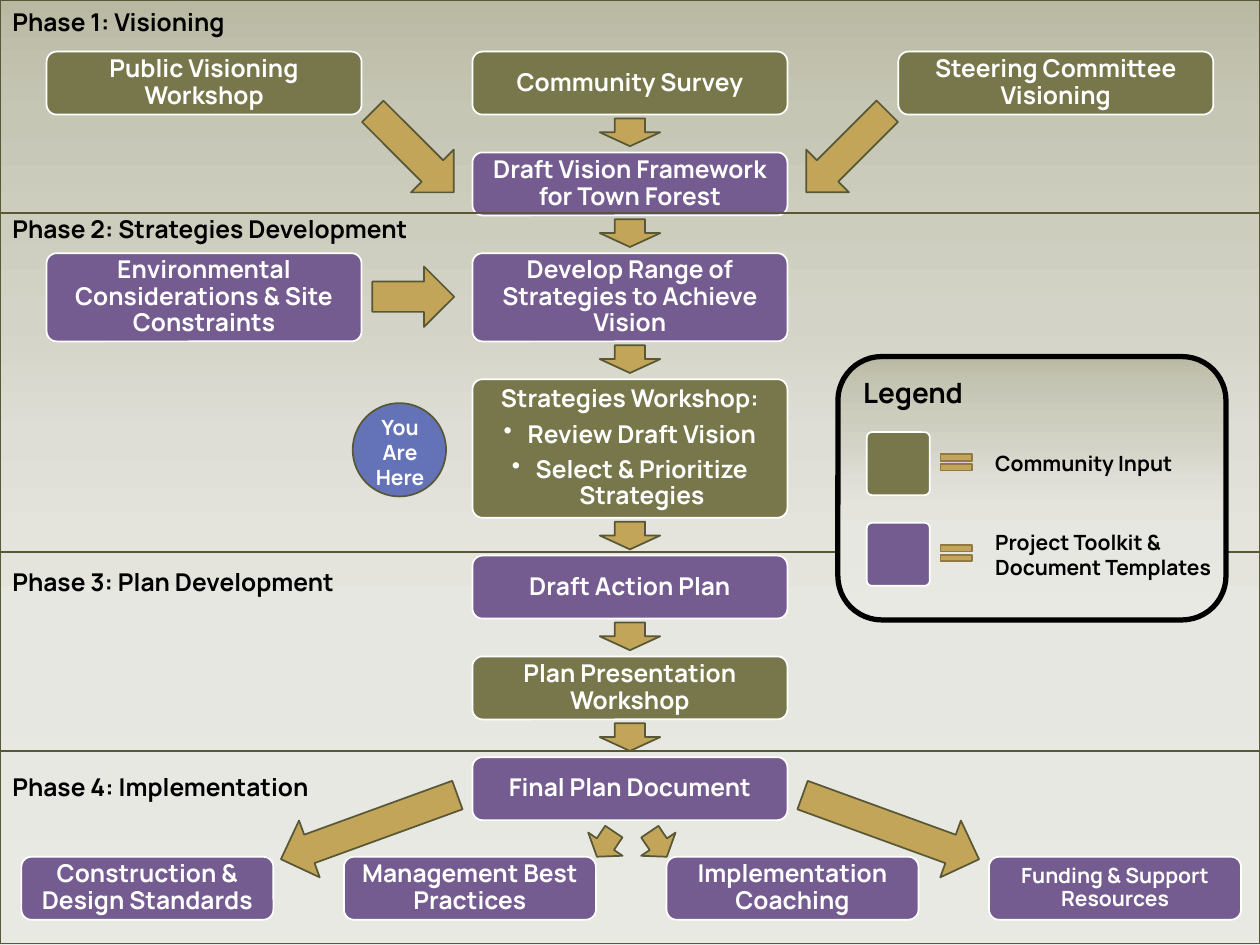
"""Build a four-phase town forest planning flowchart."""
from lxml import etree
from pptx import Presentation
from pptx.dml.color import RGBColor
from pptx.enum.shapes import MSO_SHAPE as S
from pptx.enum.text import MSO_ANCHOR as V, PP_ALIGN as A
from pptx.oxml.ns import qn
from pptx.util import Inches, Pt

HUE = dict(olive="77774B", plum="745B90", gold="C2A558", edge="585837",
           bronze="907A41", blue="6473B7", white="FFFFFF", black="000000")
FADE = [(0, "B9B9A3"), (12, "C6C6B5"), (23, "CDCDBE"), (34, "D3D3C7"), (46, "DEDED6"),
        (57, "E4E4DD"), (67, "E7E7E1"), (78, "E8E8E3"), (89, "E9E9E4"), (100, "E9E9E4")]
EDGES = [0, 1.69, 4.38, 5.96, 7.49]
PHASES = [("Phase 1: Visioning", 0.01), ("Phase 2: Strategies Development", 1.65),
          ("Phase 3: Plan Development", 4.45), ("Phase 4: Implementation", 6.08)]
STEPS = [(["Community Survey"], "olive", 0.5),
         (["Draft Vision Framework for Town Forest"], "plum", 0.5),
         (["Develop Range of Strategies to Achieve Vision"], "plum", 0.7),
         (["Strategies Workshop:", "Review Draft Vision",
           "Select & Prioritize Strategies"], "olive", 1.1),
         (["Draft Action Plan"], "plum", 0.5),
         (["Plan Presentation Workshop"], "olive", 0.5),
         (["Final Plan Document"], "plum", 0.5)]
SIDES = [("Public Visioning Workshop", "olive", 0.37, 0.41, 0.5),
         ("Steering Committee Visioning", "olive", 7.13, 0.41, 0.5),
         ("Environmental Considerations & Site Constraints", "plum", 0.37, 2.01, 0.7)]
RESULTS = [("Construction & Design Standards", 14), ("Management Best Practices", 14),
           ("Implementation Coaching", 14), ("Funding & Support Resources", 12)]
ARROWS = [(3.04, 0.75, 0.48, 0.91, 315), (6.48, 0.75, 0.48, 0.91, 45),
          (3.04, 2.03, 0.48, 0.65, 270), (4.64, 6.58, 0.33, 0.24, 34),
          (5.06, 6.58, 0.33, 0.24, 326), (2.69, 5.82, 0.48, 1.49, 70),
          (6.83, 5.82, 0.48, 1.49, 290)]
KEYS = [("Community Input", "olive", 3.43, 1.62, 0.3),
        ("Project Toolkit & Document Templates", "plum", 4.15, 1.93, 0.5)]

deck = Presentation()
deck.slide_width, deck.slide_height = Inches(10), Inches(7.5)
items = deck.slides.add_slide(deck.slide_layouts[6]).shapes


def draw(kind, x, y, w, h, fill=None, line="edge", width=1):
    shape = items.add_shape(kind, *map(Inches, (x, y, w, h)))
    shape.shadow.inherit = False
    if fill == "fade":
        shape.fill.gradient()
        shape.fill.gradient_angle = 270
        stops = shape.element.spPr.find(".//" + qn("a:gsLst"))
        for old in list(stops):
            stops.remove(old)
        for at, tone in FADE:
            stop = etree.SubElement(stops, qn("a:gs"), pos=str(at * 1000))
            etree.SubElement(stop, qn("a:srgbClr"), val=tone)
    elif fill:
        shape.fill.solid()
        shape.fill.fore_color.rgb = RGBColor.from_string(HUE[fill])
    else:
        shape.fill.background()
    if line:
        shape.line.color.rgb = RGBColor.from_string(HUE[line])
        shape.line.width = Pt(width)
    else:
        shape.line.fill.background()
    return shape


def write(shape, lines, size, hue="black", align=A.LEFT, anchor=V.TOP, lead=1):
    frame = shape.text_frame
    frame.word_wrap, frame.vertical_anchor = True, anchor
    for i, line in enumerate(lines):
        para = frame.add_paragraph() if i else frame.paragraphs[0]
        para.text, para.alignment, para.line_spacing = line, align, lead
        if i:
            para.space_before = Pt(5)
            props = para._p.get_or_add_pPr()
            props.set("marL", str(Inches(0.19)))
            props.set("indent", str(Inches(-0.19)))
            etree.SubElement(props, qn("a:buChar"), char="•")
        font = para.font
        font.name, font.size, font.bold = "Manrope", Pt(size), True
        font.color.rgb = RGBColor.from_string(HUE[hue])


def label(copy, x, y, w, h, size, hue="black", align=A.LEFT):
    write(items.add_textbox(*map(Inches, (x, y, w, h))), [copy], size, hue, align)


def block(lines, fill, x, y, w, h, size=14, curve=0.08):
    box = draw(S.ROUNDED_RECTANGLE, x, y, w, h, fill, "white")
    box.adjustments[0] = curve / min(w, h)
    if lines:
        write(box, lines, size, "white", A.CENTER, V.MIDDLE, 0.9)


def arrow(x, y, w, h, turn=0):
    draw(S.DOWN_ARROW, x, y, w, h, "gold").rotation = turn


def band(i):
    draw(S.RECTANGLE, 0, EDGES[i], 10, EDGES[i + 1] - EDGES[i])


draw(S.RECTANGLE, 0, 0, 10, 7.5, "fade", None)
band(1)
band(2)
for name, top in PHASES:
    label(name, 0, top, 3.7, 0.33, 14)

legend = draw(S.ROUNDED_RECTANGLE, 6.65, 2.83, 3.08, 2.09, "fade", "black", 3)
write(legend, ["Legend"], 16)
for name, fill, top, wide, high in KEYS:
    block([], fill, 6.88, top, 0.5, 0.5, curve=0.04)
    draw(S.MATH_EQUAL, 7.42, top + 0.13, 0.34, 0.22, "gold", "bronze")
    label(name, 7.8, top + 0.25 - high / 2, wide, high, 12)

top = 0.41
for i, (lines, fill, high) in enumerate(STEPS):
    block(lines, fill, 3.75, top, 2.5, high)
    if i < len(STEPS) - 1:
        arrow(4.76, top + high + 0.03, 0.48, 0.22)
    top += high + 0.3
for name, fill, x, y, high in SIDES:
    block([name], fill, x, y, 2.5, high)
for i, (name, size) in enumerate(RESULTS):
    block([name], "plum", 0.17 + 2.56 * i, 6.8, 2, 0.5, size)
for place in ARROWS:
    arrow(*place)

band(0)
band(3)
draw(S.OVAL, 2.8, 3.2, 0.74, 0.74, "blue")
label("You Are Here", 2.85, 3.24, 0.65, 0.71, 12, "white", A.CENTER)
deck.save("out.pptx")
